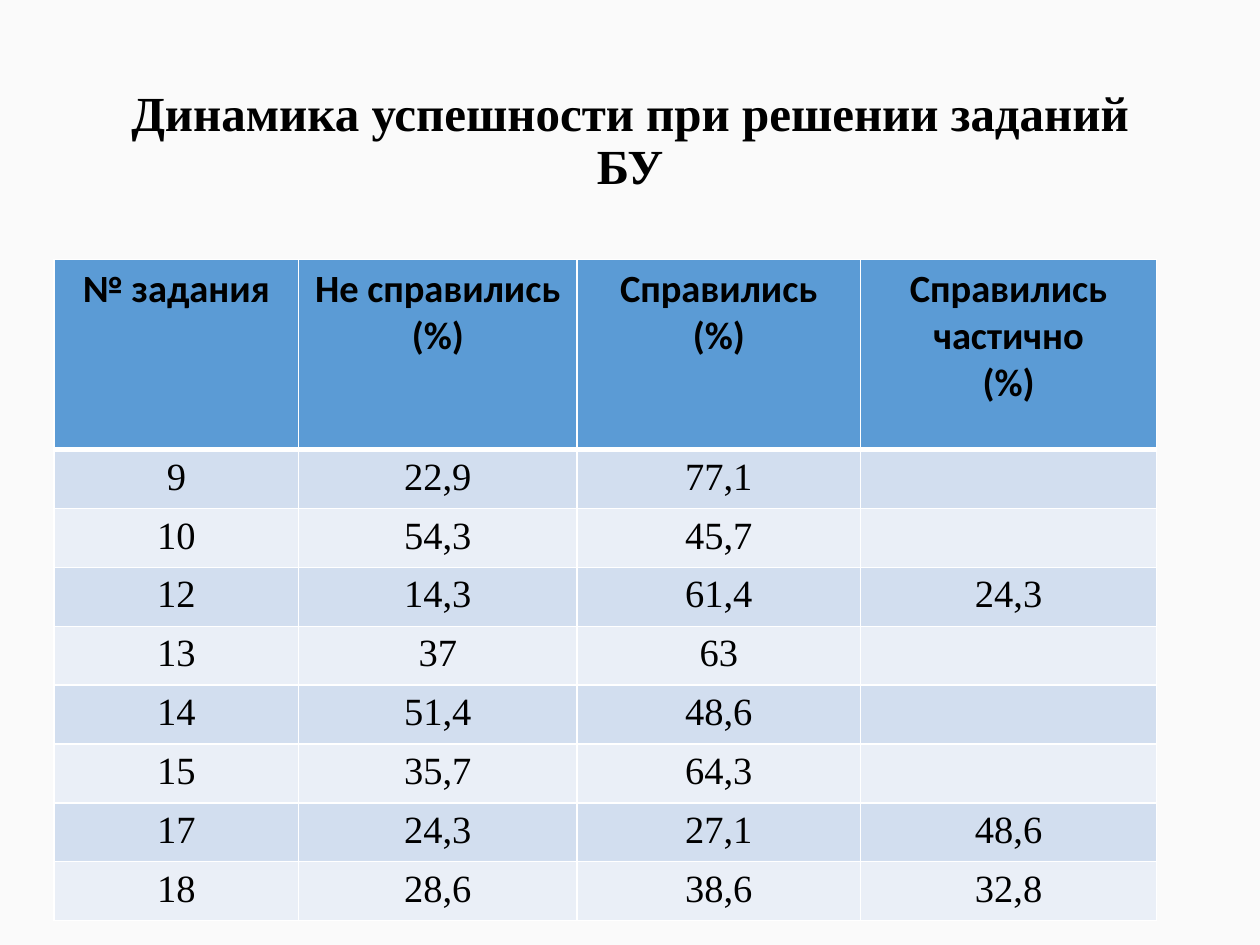
from lxml import etree
from pptx import Presentation, util as u
from pptx.dml.color import RGBColor
from pptx.enum import text
from pptx.oxml import ns

COLUMNS, ROWS = 1000, 750
UNIT = u.Inches(10) // COLUMNS

PAPER = RGBColor(0xFA, 0xFA, 0xFA)
INK = RGBColor(0x00, 0x00, 0x00)
RULE = RGBColor(0xFF, 0xFF, 0xFF)
HEADER = RGBColor(0x5B, 0x9B, 0xD5)
BANDS = RGBColor(0xEA, 0xEF, 0xF7), RGBColor(0xD2, 0xDE, 0xEF)

SERIF, SANS = "Times New Roman", "Calibri"
TITLE = "Динамика успешности при решении заданий БУ"
HEADINGS = [
    "№ задания",
    "Не справились \n(%)",
    "Справились\n(%)",
    "Справились частично\n(%)",
]
RESULTS = [
    ("9", "22,9", "77,1", ""),
    ("10", "54,3", "45,7", ""),
    ("12", "14,3", "61,4", "24,3"),
    ("13", "37", "63", ""),
    ("14", "51,4", "48,6", ""),
    ("15", "35,7", "64,3", ""),
    ("17", "24,3", "27,1", "48,6"),
    ("18", "28,6", "38,6", "32,8"),
]
COLUMN_SPANS = [194, 221, 225, 235]
HEADER_SPAN, RESULT_SPAN = 151, 44


def write(frame, words, font=SERIF, size=22, bold=False, spacing=None):
    frame.text = words
    for para in frame.paragraphs:
        para.alignment = text.PP_ALIGN.CENTER
        para.line_spacing = spacing
        para.font.size = u.Pt(size)
        for span in para.runs:
            span.font.name = font
            span.font.size = u.Pt(size)
            span.font.bold = bold
            span.font.color.rgb = INK


def draw_borders(cell, widths):
    properties = cell._tc.get_or_add_tcPr()
    for position, (side, width) in enumerate(widths.items()):
        line = etree.Element(ns.qn(f"a:ln{side}"), w=str(u.Pt(width)))
        fill = etree.SubElement(line, ns.qn("a:solidFill"))
        etree.SubElement(fill, ns.qn("a:srgbClr"), val=str(RULE))
        properties.insert(position, line)


def add_title(page, left, top, width, height):
    box = page.shapes.add_textbox(*(n * UNIT for n in (left, top, width, height)))
    box.text_frame.word_wrap = True
    box.text_frame.vertical_anchor = text.MSO_ANCHOR.MIDDLE
    write(box.text_frame, TITLE, size=28, bold=True, spacing=0.9)


def add_results(page, left, top, width, height):
    records = [HEADINGS, *RESULTS]
    table = page.shapes.add_table(
        len(records), len(HEADINGS),
        *(n * UNIT for n in (left, top, width, height))).table
    for column, span in zip(table.columns, COLUMN_SPANS):
        column.width = span * UNIT
    for number, (row, record) in enumerate(zip(table.rows, records)):
        heading = number == 0
        row.height = (HEADER_SPAN if heading else RESULT_SPAN) * UNIT
        for cell, words in zip(row.cells, record):
            cell.fill.solid()
            cell.fill.fore_color.rgb = HEADER if heading else BANDS[number % 2]
            draw_borders(cell, {"L": 1, "R": 1, "T": 3 if number == 1 else 1,
                                "B": 3 if heading else 1})
            write(cell.text_frame, words, font=SANS if heading else SERIF, bold=heading)


def main():
    deck = Presentation()
    deck.slide_width, deck.slide_height = COLUMNS * UNIT, ROWS * UNIT
    page = deck.slides.add_slide(deck.slide_layouts[6])
    page.background.fill.solid()
    page.background.fill.fore_color.rgb = PAPER
    add_title(page, 69, 40, 862, 145)
    add_results(page, 43, 206, sum(COLUMN_SPANS),
                HEADER_SPAN + RESULT_SPAN * len(RESULTS))
    deck.save("out.pptx")


if __name__ == "__main__":
    main()
